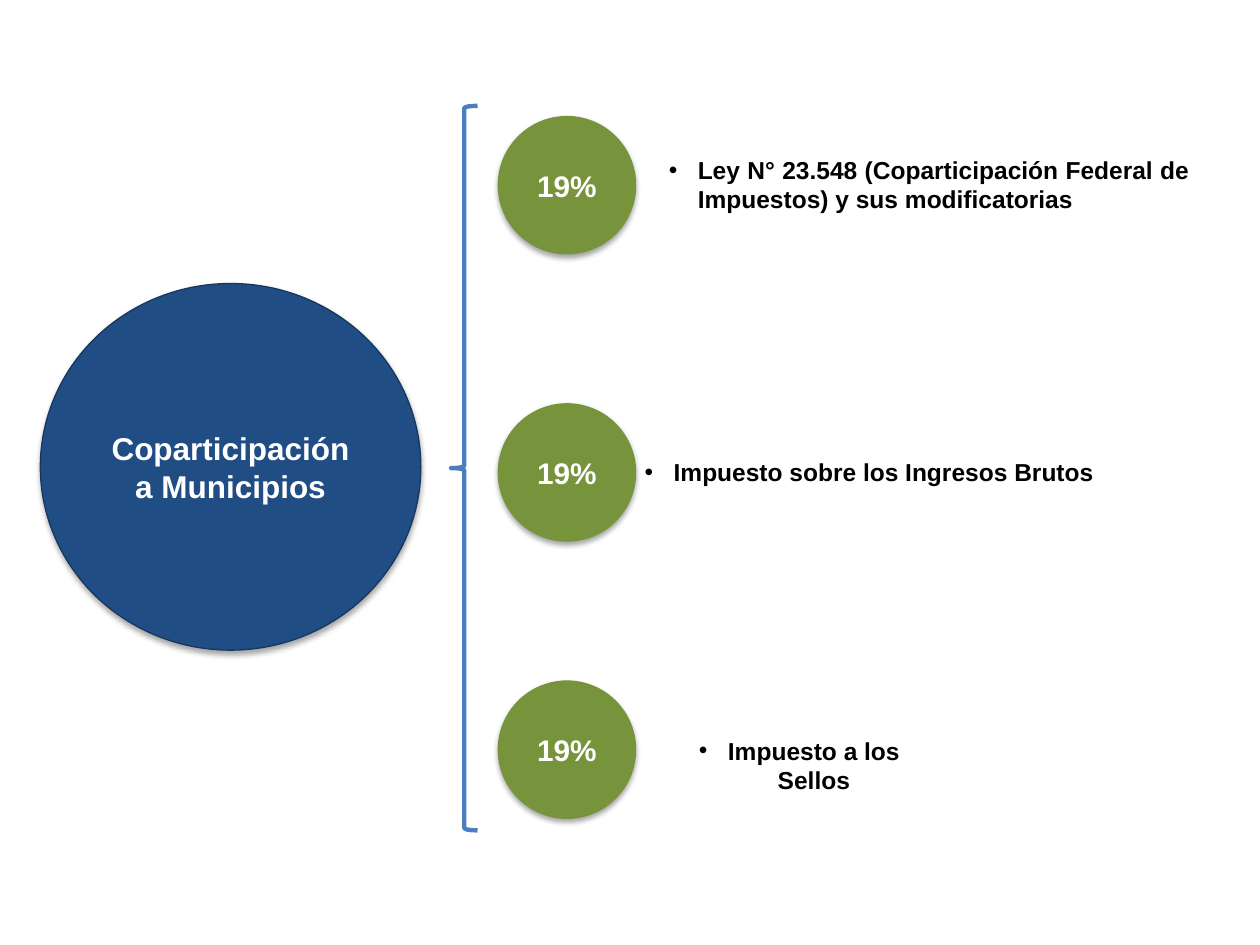
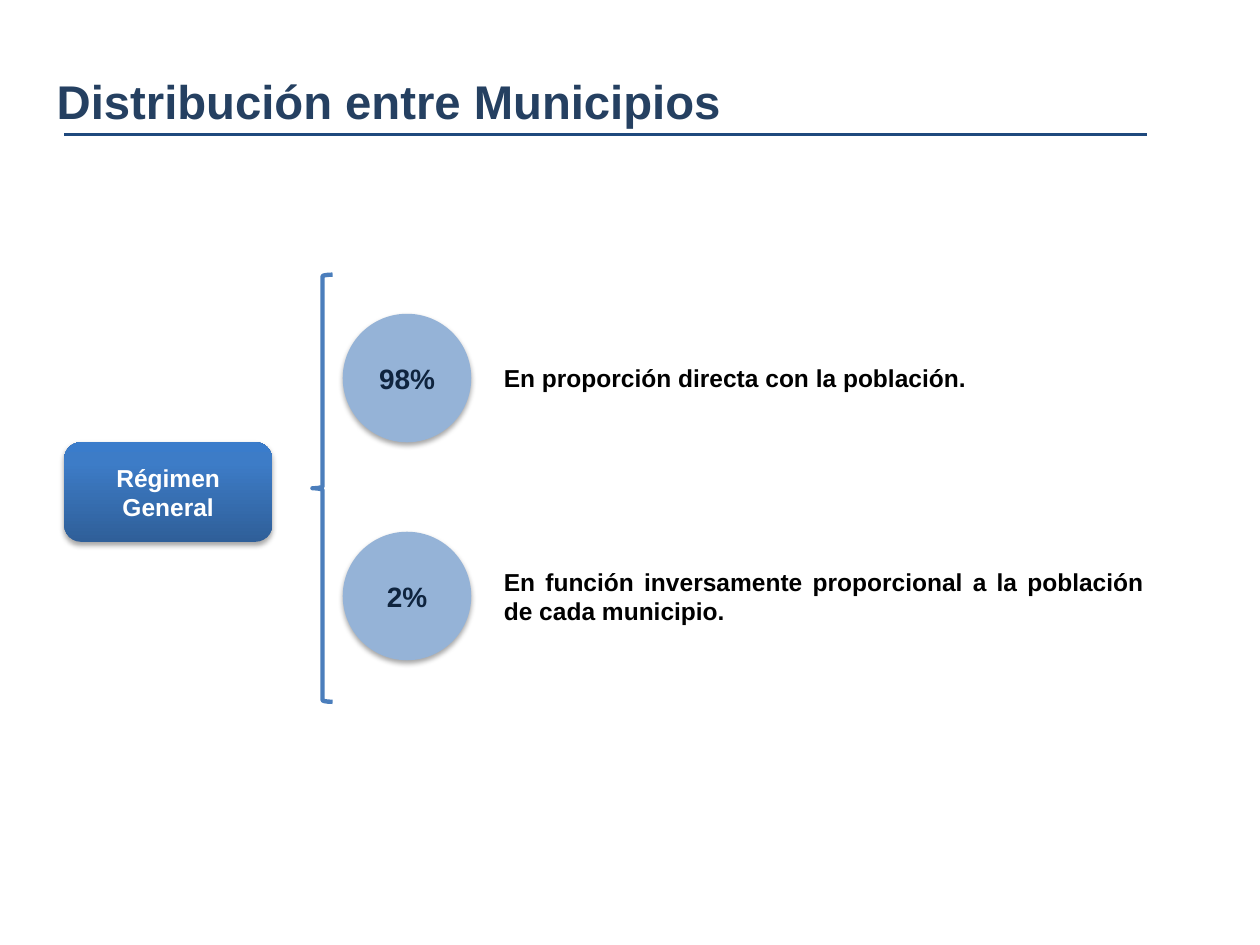
from copy import deepcopy

from lxml import etree
from pptx import Presentation
from pptx.dml.color import RGBColor
from pptx.enum.shapes import MSO_CONNECTOR, MSO_SHAPE
from pptx.enum.text import MSO_ANCHOR, MSO_AUTO_SIZE, PP_ALIGN
from pptx.oxml.ns import qn
from pptx.util import Inches, Pt

OVAL, ROUNDED, BRACE = MSO_SHAPE.OVAL, MSO_SHAPE.ROUNDED_RECTANGLE, MSO_SHAPE.LEFT_BRACE
STRAIGHT = MSO_CONNECTOR.STRAIGHT
LEFT, CENTER, JUSTIFY = PP_ALIGN.LEFT, PP_ALIGN.CENTER, PP_ALIGN.JUSTIFY
TOP, MIDDLE = MSO_ANCHOR.TOP, MSO_ANCHOR.MIDDLE
NO_AUTOFIT = MSO_AUTO_SIZE.NONE
TITLE_ONLY, BLANK = 5, 6

FONT = "Arial"
COLORS = {
    "white": "FFFFFF",
    "black": "000000",
    "navy": "204D84",
    "navy_edge": "17375E",
    "green": "77933C",
    "light_blue": "95B3D7",
    "dark_text": "0F243E",
    "title": "254061",
    "rule": "1F497D",
    "brace": "4B7EBC",
}
BOX_GRADIENT = [(0, "2F5F99"), (0.8, "3D7CC7"), (1, "3A7CCB")]
BULLET_INDENT = Inches(0.23)


def rgb(name):
    return RGBColor.from_string(COLORS[name])


def set_text(sp, text, size, color, align, anchor):
    tf = sp.text_frame
    tf.word_wrap = True
    tf.vertical_anchor = anchor
    tf.text = text
    p = tf.paragraphs[0]
    p.alignment = align
    font = p.runs[0].font
    font.name, font.size, font.bold = FONT, Pt(size), True
    font.color.rgb = rgb(color)


def add_bullet(p):
    pPr = p._p.get_or_add_pPr()
    pPr.set("marL", str(BULLET_INDENT))
    pPr.set("indent", str(-BULLET_INDENT))
    etree.SubElement(pPr, qn("a:buFont"), typeface=FONT)
    etree.SubElement(pPr, qn("a:buChar"), char="•")


def add_plain_shape(slide, kind, x, y, w, h):
    sp = slide.shapes.add_shape(kind, Inches(x), Inches(y), Inches(w), Inches(h))
    sp.shadow.inherit = False
    return sp


def add_soft_shadow(sp):
    effects = sp._element.spPr.find(qn("a:effectLst"))
    shadow = etree.SubElement(
        effects, qn("a:outerShdw"), blurRad=str(Pt(3.1)), dist=str(Pt(1.8)),
        dir="5400000", rotWithShape="0")
    color = etree.SubElement(shadow, qn("a:srgbClr"), val=COLORS["black"])
    etree.SubElement(color, qn("a:alpha"), val="35000")


def add_circle(slide, x, y, w, h, text, size, fill, color="white", edge=None):
    sp = add_plain_shape(slide, OVAL, x, y, w, h)
    add_soft_shadow(sp)
    sp.fill.solid()
    sp.fill.fore_color.rgb = rgb(fill)
    if edge:
        sp.line.color.rgb = rgb(edge)
        sp.line.width = Pt(0.75)
    else:
        sp.line.fill.background()
    set_text(sp, text, size, color, CENTER, MIDDLE)


def add_gradient_box(slide, x, y, w, h, text):
    sp = add_plain_shape(slide, ROUNDED, x, y, w, h)
    add_soft_shadow(sp)
    sp.line.fill.background()
    sp.fill.gradient()
    sp.fill.gradient_angle = 90
    stop_list = sp._element.spPr.find(".//" + qn("a:gsLst"))
    stop_list.append(deepcopy(stop_list[0]))
    for stop, (position, color) in zip(sp.fill.gradient_stops, BOX_GRADIENT):
        stop.position = position
        stop.color.rgb = RGBColor.from_string(color)
    set_text(sp, text, 14, "white", CENTER, MIDDLE)


def add_brace(slide, x, y, w, h):
    sp = add_plain_shape(slide, BRACE, x, y, w, h)
    sp.fill.background()
    sp.line.color.rgb = rgb("brace")
    sp.line.width = Pt(2.5)


def add_label(slide, x, y, w, h, text, align=JUSTIFY, bullet=False):
    sp = slide.shapes.add_textbox(Inches(x), Inches(y), Inches(w), Inches(h))
    set_text(sp, text, 14, "black", align, TOP)
    if bullet:
        add_bullet(sp.text_frame.paragraphs[0])


def add_title(slide, text):
    """Fill the title placeholder and underline it with a rule."""
    title = slide.shapes.title
    title.left, title.top = Inches(0.35), Inches(0.52)
    title.width, title.height = Inches(8.82), Inches(0.56)
    set_text(title, text, 27, "title", LEFT, TOP)
    title.text_frame.auto_size = NO_AUTOFIT
    rule = slide.shapes.add_connector(
        STRAIGHT, Inches(0.51), Inches(1.07), Inches(9.1), Inches(1.07))
    rule.line.color.rgb = rgb("rule")
    rule.line.width = Pt(1.5)
    etree.SubElement(rule._element.spPr, qn("a:effectLst"))


def build_sources_slide(prs):
    slide = prs.slides.add_slide(prs.slide_layouts[BLANK])
    add_circle(slide, 0.32, 2.25, 3.02, 2.91, "Coparticipación a Municipios", 18,
               "navy", edge="navy_edge")
    add_brace(slide, 3.58, 0.84, 0.21, 5.75)
    for y in (0.92, 3.2, 5.4):
        add_circle(slide, 3.95, y, 1.1, 1.1, "19%", 17, "green")
    taxes = [
        (5.21, 1.18, 4.33, 0.57, JUSTIFY,
         "Ley N° 23.548 (Coparticipación Federal de Impuestos) y sus modificatorias"),
        (4.86, 3.58, 4.08, 0.34, CENTER, "Impuesto sobre los Ingresos Brutos"),
        (5.21, 5.79, 2.27, 0.57, CENTER, "Impuesto a los Sellos"),
    ]
    for x, y, w, h, align, text in taxes:
        add_label(slide, x, y, w, h, text, align, bullet=True)


def build_distribution_slide(prs):
    slide = prs.slides.add_slide(prs.slide_layouts[TITLE_ONLY])
    add_title(slide, "Distribución entre Municipios")
    add_gradient_box(slide, 0.51, 3.51, 1.65, 0.79, "Régimen General")
    add_brace(slide, 2.48, 2.18, 0.16, 3.39)
    for y, share in ((2.49, "98%"), (4.22, "2%")):
        add_circle(slide, 2.72, y, 1.02, 1.02, share, 16, "light_blue", "dark_text")
    add_label(slide, 3.9, 2.83, 5.12, 0.34, "En proporción directa con la población.")
    add_label(slide, 3.9, 4.45, 5.28, 0.57,
              "En función inversamente proporcional a la población de cada municipio.")


def main():
    prs = Presentation()
    prs.slide_width, prs.slide_height = Inches(10), Inches(7.5)
    build_sources_slide(prs)
    build_distribution_slide(prs)
    prs.save("out.pptx")


if __name__ == "__main__":
    main()
